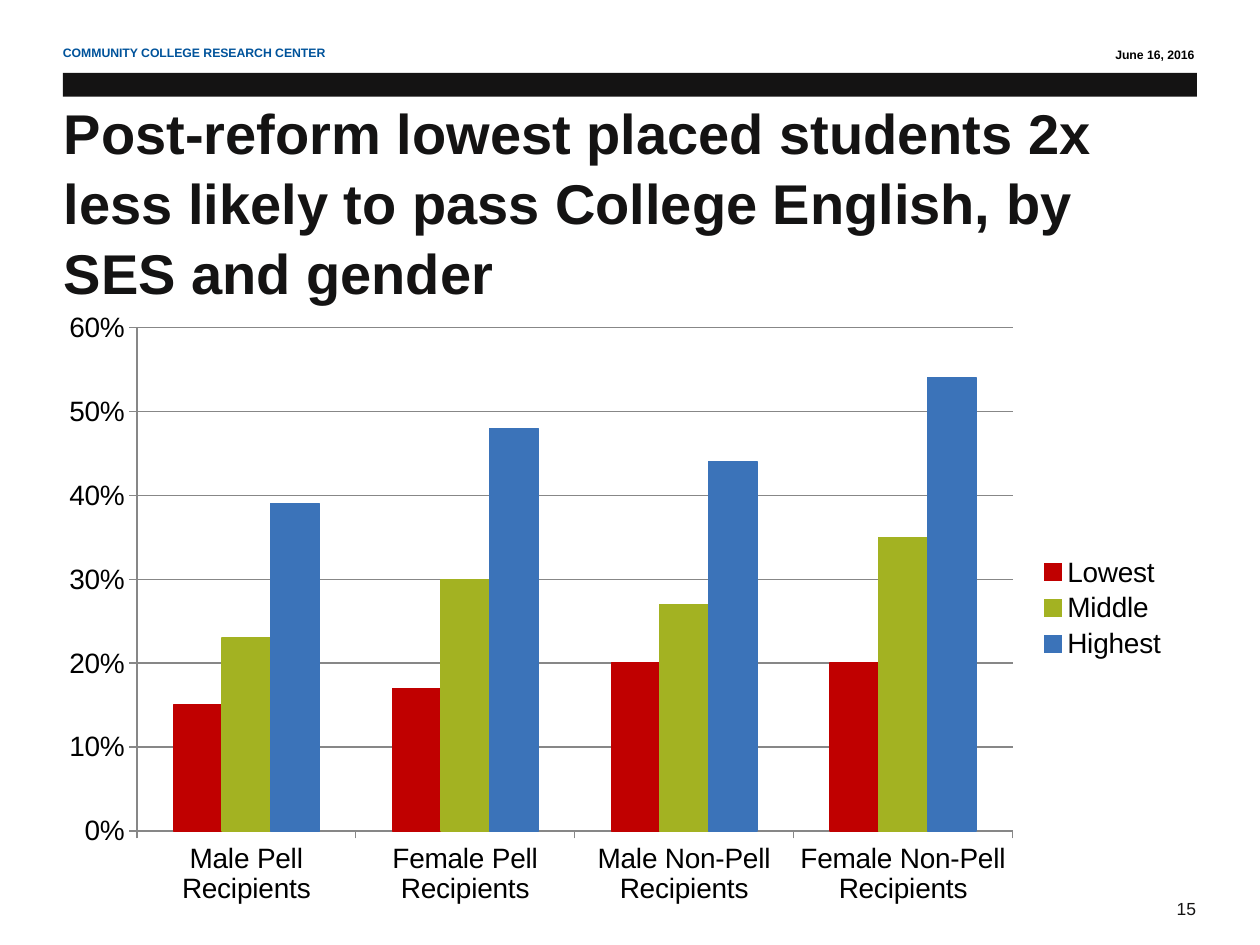
from pptx import Presentation
from pptx.chart.data import CategoryChartData
from pptx.dml.color import RGBColor
from pptx.enum.chart import XL_CHART_TYPE, XL_LEGEND_POSITION, XL_TICK_MARK
from pptx.enum.shapes import MSO_SHAPE
from pptx.enum.text import MSO_ANCHOR, PP_ALIGN
from pptx.util import Cm, Pt

HUES = {"ink": "141313", "black": "000000", "brand": "00539B", "rule": "878787",
        "low": "C00000", "mid": "A3B222", "high": "3B73B9"}
CATS = ["Male Pell Recipients", "Female Pell Recipients",
        "Male Non-Pell Recipients", "Female Non-Pell Recipients"]
ROWS = [("Lowest", "low", (0.15, 0.17, 0.20, 0.20)),
        ("Middle", "mid", (0.23, 0.30, 0.27, 0.35)),
        ("Highest", "high", (0.39, 0.48, 0.44, 0.54))]


def hue(name):
    """Return the named colour."""
    return RGBColor.from_string(HUES[name])


def put(item, **vals):
    """Set each given attribute on the item."""
    for key, val in vals.items():
        setattr(item, key, val)


def ink(font, size, tone="black", bold=False):
    """Style a font."""
    put(font, name="Arial", size=Pt(size), bold=bold)
    font.color.rgb = hue(tone)


def stroke(line, tone):
    """Style a thin line."""
    line.color.rgb = hue(tone)
    line.width = Pt(0.75)


def label(slide, box, text, style, align=PP_ALIGN.LEFT, anchor=MSO_ANCHOR.TOP):
    """Place one paragraph of text in the box."""
    frame = slide.shapes.add_textbox(*map(Cm, box)).text_frame
    put(frame, word_wrap=True, vertical_anchor=anchor)
    para = frame.paragraphs[0]
    put(para, text=text, alignment=align)
    ink(para.runs[0].font, **style)
    return para


def head(slide, box):
    """Place the centre name, the date and the bar below them."""
    left, top, width, height = box
    label(slide, (left - 0.25, top, 9.04, 0.56), "COMMUNITY COLLEGE RESEARCH CENTER",
          {"size": 7, "tone": "brand", "bold": True})
    label(slide, (left + width - 9.96, top + 0.03, 10.16, 0.56), "June 16, 2016",
          {"size": 7, "bold": True}, PP_ALIGN.RIGHT)
    deep = 0.48
    bar = slide.shapes.add_shape(
        MSO_SHAPE.RECTANGLE, *map(Cm, (left, top + height - deep, width, deep)))
    bar.shadow.inherit = False
    bar.fill.solid()
    bar.fill.fore_color.rgb = hue("ink")
    bar.line.fill.background()


def title(slide, box):
    """Place the slide title."""
    para = label(slide, box, "Post-reform lowest placed students 2x less likely to pass "
                 "College English, by SES and gender",
                 {"size": 32, "tone": "ink", "bold": True}, anchor=MSO_ANCHOR.MIDDLE)
    para.line_spacing = 1.04


def plot(slide, box):
    """Place the column chart with its legend."""
    data = CategoryChartData(number_format="0%")
    data.categories = CATS
    for name, _, vals in ROWS:
        data.add_series(name, vals)
    chart = slide.shapes.add_chart(
        XL_CHART_TYPE.COLUMN_CLUSTERED, *map(Cm, box), data).chart
    put(chart, has_title=False, has_legend=True)
    ink(chart.font, 18)
    put(chart.legend, position=XL_LEGEND_POSITION.RIGHT, include_in_layout=False)
    ink(chart.legend.font, 16)
    for axis in (chart.category_axis, chart.value_axis):
        put(axis, major_tick_mark=XL_TICK_MARK.OUTSIDE,
            minor_tick_mark=XL_TICK_MARK.NONE)
        ink(axis.tick_labels.font, 16)
        stroke(axis.format.line, "rule")
    axis = chart.value_axis
    put(axis, minimum_scale=0, maximum_scale=0.6, major_unit=0.1,
        has_major_gridlines=True)
    put(axis.tick_labels, number_format="0%", number_format_is_linked=False)
    stroke(axis.major_gridlines.format.line, "rule")
    group = chart.plots[0]
    put(group, gap_width=150, overlap=0, vary_by_categories=False)
    for row, (_, tone, _) in zip(group.series, ROWS):
        row.invert_if_negative = False
        row.format.fill.solid()
        row.format.fill.fore_color.rgb = hue(tone)
        stroke(row.format.line, tone)


def foot(slide, box):
    """Place the slide number."""
    label(slide, box, "15", {"size": 10, "tone": "ink"})


def main():
    """Build and save the slide."""
    deck = Presentation()
    put(deck, slide_width=Cm(25.4), slide_height=Cm(19.05))
    slide = deck.slides.add_slide(deck.slide_layouts[6])
    head(slide, (1.27, 0.79, 22.86, 1.16))
    title(slide, (1.04, 2.44, 22.86, 3.2))
    plot(slide, (0.94, 6.05, 22.86, 12.42))
    foot(slide, (23.47, 17.98, 1.17, 0.69))
    deck.save("out.pptx")


if __name__ == "__main__":
    main()
